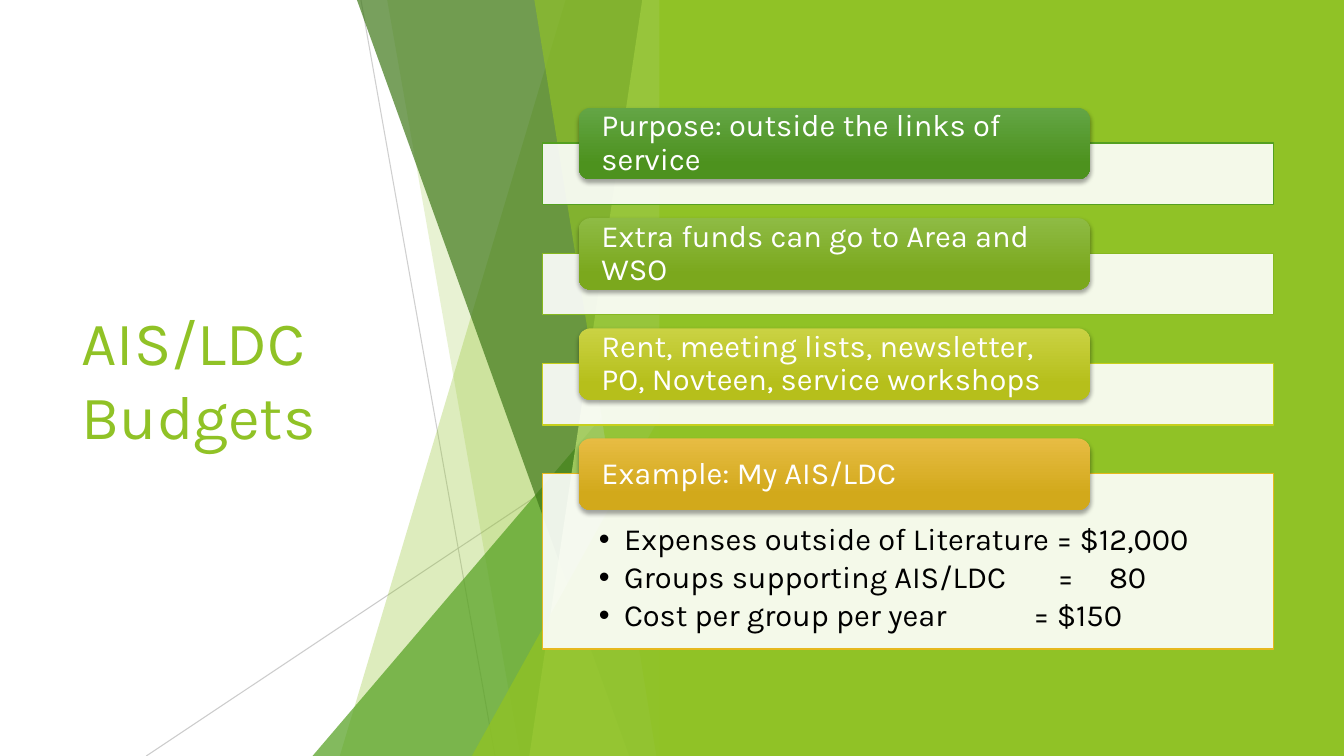
from lxml import etree
from pptx import Presentation
from pptx.dml.color import RGBColor
from pptx.enum import shapes, text
from pptx.oxml import ns
from pptx.util import Inches, Pt

FONT = "Karla"
GREEN = "90C226"


def rgb(color):
    return RGBColor.from_string(color)


def add_xml(parent, tag, **attributes):
    """Append a DrawingML element to parent and return it."""
    values = {name: str(value) for name, value in attributes.items()}
    return etree.SubElement(parent, ns.qn(tag), values)


presentation = Presentation()
presentation.slide_width = Inches(13.33)
presentation.slide_height = Inches(7.5)
slide = presentation.slides.add_slide(presentation.slide_layouts[6])

# Title
title = slide.shapes.add_textbox(Inches(0.71), Inches(1.51), Inches(3.88), Inches(4.48))
title.text_frame.word_wrap = True
title.text_frame.vertical_anchor = text.MSO_ANCHOR.MIDDLE
title.text_frame.text = "AIS/LDC Budgets"
title_font = title.text_frame.paragraphs[0].runs[0].font
title_font.name = FONT
title_font.size = Pt(44)
title_font.color.rgb = rgb(GREEN)

# Thin crossing lines
for x1, y1, x2, y2, opacity in [(3.58, 0, 4.91, 7.5, 75), (6.66, 4.03, 1.45, 7.5, 80)]:
    line = slide.shapes.add_connector(
        shapes.MSO_CONNECTOR.STRAIGHT, Inches(x1), Inches(y1), Inches(x2), Inches(y2))
    line.line.color.rgb = rgb("BFBFBF")
    line.line.width = Pt(0.75)
    line_color = line.line._get_or_add_ln().find(".//" + ns.qn("a:srgbClr"))
    add_xml(line_color, "a:alpha", val=opacity * 1000)
    add_xml(line._element.spPr, "a:effectLst")

# Translucent facets: all end at the same right edge and at the slide bottom
facet_right = 6.66
facets = [  # kind, left at top (band) or top (triangle), left at bottom, colour, opacity
    ("band", 5.61, 3.37, GREEN, 30),
    ("band", 3.84, 5.16, GREEN, 20),
    ("triangle", 3.33, 3.10, "54A021", 72),
    ("band", 3.54, 6.24, "3F7819", 70),
    ("band", 6.37, 5.25, "C0E474", 70),
    ("band", 5.30, 6.51, GREEN, 65),
    ("triangle", 3.93, 4.68, GREEN, 80),
]
for kind, start, bottom_left, color, opacity in facets:
    if kind == "triangle":
        facet = slide.shapes.add_shape(
            shapes.MSO_SHAPE.ISOSCELES_TRIANGLE, Inches(bottom_left), Inches(start),
            Inches(facet_right - bottom_left), Inches(7.5 - start))
        facet.adjustments[0] = 1
    else:
        builder = slide.shapes.build_freeform(Inches(start), 0)
        builder.add_line_segments([
            (Inches(facet_right), 0),
            (Inches(facet_right), Inches(7.5)),
            (Inches(bottom_left), Inches(7.5)),
        ])
        facet = builder.convert_to_shape()
    facet.shadow.inherit = False
    facet.fill.solid()
    facet.fill.fore_color.rgb = rgb(color)
    add_xml(facet._element.spPr.find(".//" + ns.qn("a:srgbClr")), "a:alpha", val=opacity * 1000)
    facet.line.fill.background()

panel = slide.shapes.add_shape(
    shapes.MSO_SHAPE.RECTANGLE, Inches(6.54), 0, Inches(13.33 - 6.54), Inches(7.5))
panel.shadow.inherit = False
panel.fill.solid()
panel.fill.fore_color.rgb = rgb(GREEN)
panel.line.fill.background()

# Topic list: an outlined box with a gradient label on its top edge
first_top, last_top = 1.42, 4.70
topics = [  # label, outline, gradient start, gradient end, box height
    ("Purpose: outside the links of service", "54A021", "63A545", "4D921E", 0.61),
    ("Extra funds can go to Area and WSO", "86B820", "8EBB44", "7BA81D", 0.61),
    ("Rent, meeting lists, newsletter, PO, Novteen, service workshops",
     "C7D01D", "CAD243", "B6BF1B", 0.61),
    ("Example: My AIS/LDC", "E6B91E", "E7BC43", "D2A91B", 1.74),
]
step = (last_top - first_top) / (len(topics) - 1)
for index, (label_text, outline, light, dark, height) in enumerate(topics):
    top = first_top + index * step
    box = slide.shapes.add_shape(
        shapes.MSO_SHAPE.RECTANGLE, Inches(5.38), Inches(top), Inches(7.25), Inches(height))
    box.shadow.inherit = False
    box.fill.solid()
    box.fill.fore_color.rgb = rgb("FFFFFF")
    add_xml(box._element.spPr.find(".//" + ns.qn("a:srgbClr")), "a:alpha", val=90000)
    box.line.color.rgb = rgb(outline)
    box.line.width = Pt(1)

    label = slide.shapes.add_shape(
        shapes.MSO_SHAPE.ROUNDED_RECTANGLE,
        Inches(5.74), Inches(top - 0.35), Inches(5.07), Inches(0.71))
    label.fill.gradient()
    label.fill.gradient_angle = 270
    for stop, color, position in zip(label.fill.gradient_stops, (light, dark), (0, 0.78)):
        stop.color.rgb = rgb(color)
        stop.position = position
    label.line.fill.background()
    effects = add_xml(label._element.spPr, "a:effectLst")
    shadow = add_xml(effects, "a:outerShdw", blurRad=Pt(3), dist=Pt(2), dir=90 * 60000,
                     algn="ctr", rotWithShape=0)
    add_xml(add_xml(shadow, "a:srgbClr", val="000000"), "a:alpha", val=35000)

    frame = label.text_frame
    frame.word_wrap = True
    frame.vertical_anchor = text.MSO_ANCHOR.MIDDLE
    frame.margin_left = frame.margin_right = Inches(0.19)
    frame.margin_top = frame.margin_bottom = Inches(0.03)
    frame.text = label_text
    paragraph = frame.paragraphs[0]
    paragraph.alignment = text.PP_ALIGN.LEFT
    paragraph.line_spacing = 0.9
    run_font = paragraph.runs[0].font
    run_font.name = FONT
    run_font.size = Pt(22)
    run_font.color.rgb = rgb("FFFFFF")

# Example figures go in the last, taller box
frame = box.text_frame
frame.word_wrap = True
frame.vertical_anchor = text.MSO_ANCHOR.TOP
frame.margin_left = frame.margin_right = Inches(0.56)
frame.margin_top = Inches(0.5)
frame.margin_bottom = Inches(0.17)
figures = [  # text, tab stops
    ("Expenses outside of Literature = $12,000", []),
    ("Groups supporting AIS/LDC\t=\t80", [4.55, 5.06]),
    ("Cost per group per year\t= $150", [4.31]),
]
frame.text = "\n".join(figure for figure, stops in figures)
for paragraph, (figure, stops) in zip(frame.paragraphs, figures):
    paragraph.alignment = text.PP_ALIGN.LEFT
    paragraph.line_spacing = 0.9
    paragraph.space_after = Pt(3.3)
    properties = paragraph._p.get_or_add_pPr()
    properties.set("marL", str(Inches(0.25)))
    properties.set("indent", str(Inches(-0.25)))
    add_xml(properties, "a:buFont", typeface="Arial")
    add_xml(properties, "a:buChar", char="•")
    if stops:
        tab_list = add_xml(properties, "a:tabLst")
        for stop in stops:
            add_xml(tab_list, "a:tab", pos=Inches(stop), algn="l")
    for run in paragraph.runs:
        run.font.name = FONT
        run.font.size = Pt(22)
        run.font.color.rgb = rgb("000000")

presentation.save("out.pptx")
